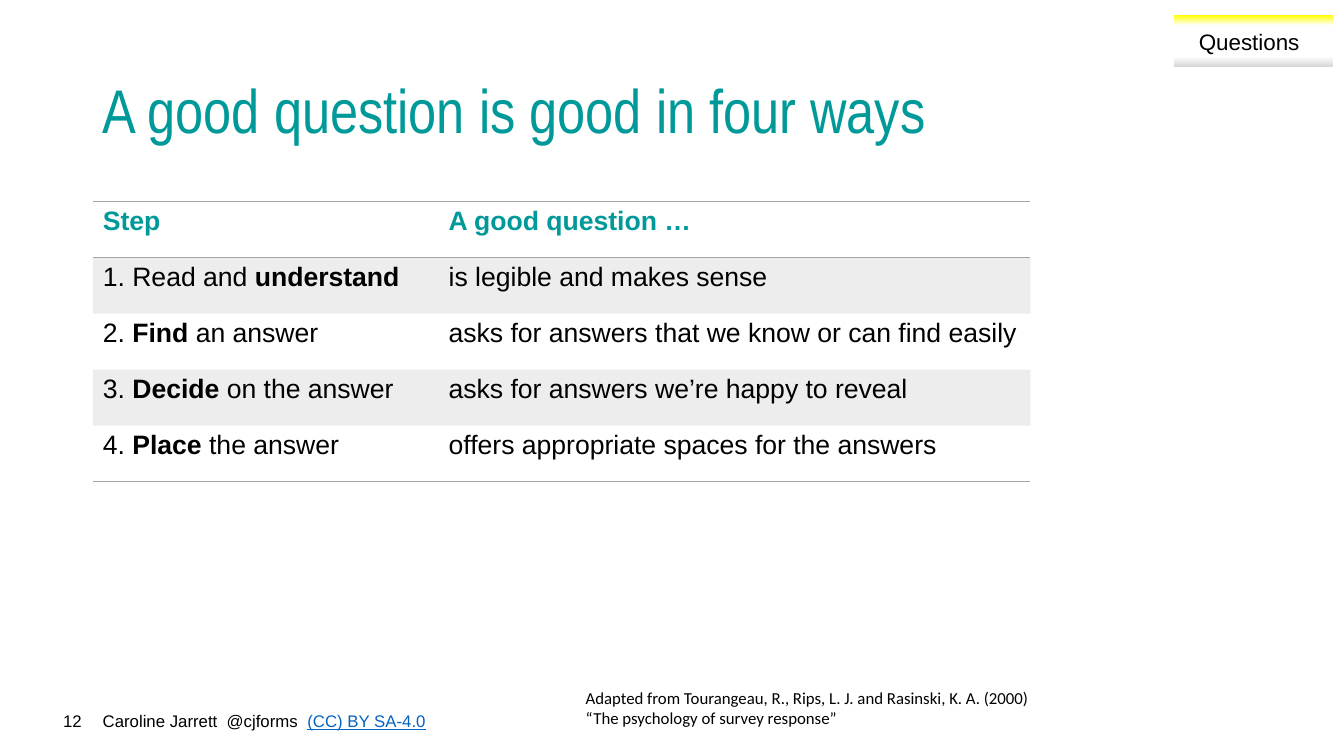
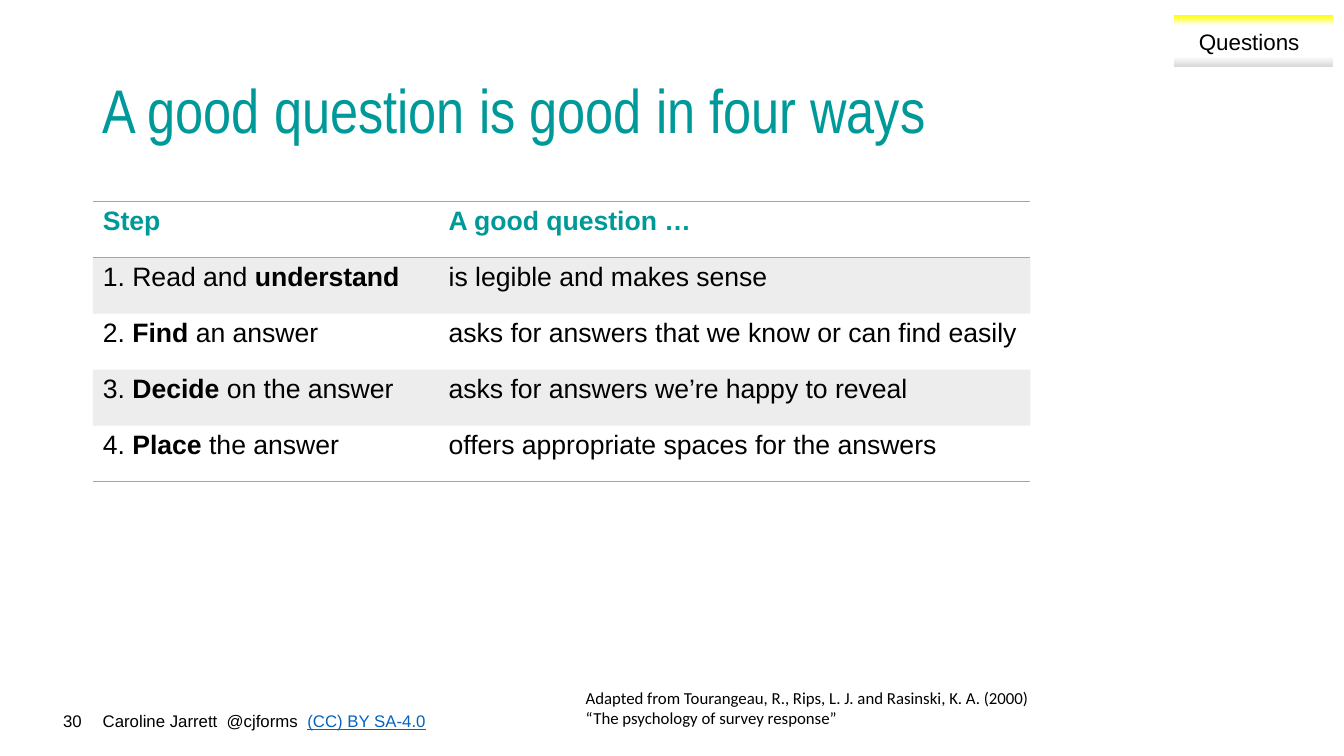
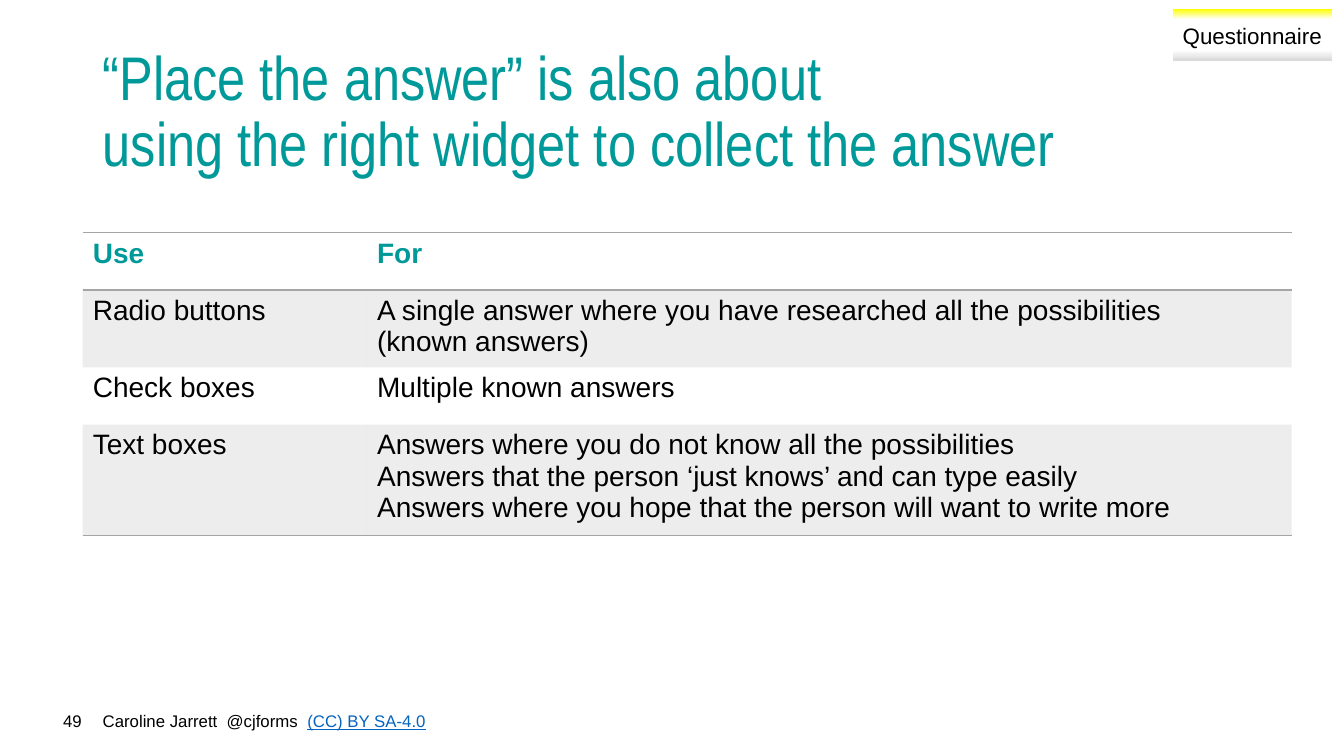
from lxml.etree import SubElement
from pptx import Presentation
from pptx.dml.color import RGBColor
from pptx.enum.shapes import MSO_SHAPE
from pptx.enum.text import MSO_ANCHOR, PP_ALIGN
from pptx.oxml.ns import qn
from pptx.util import Inches, Pt

COLORS = {
    "teal": "009999", "black": "000000", "gray": "A5A5A5", "link": "0563C1",
    "yellow": "FFFF00", "white": "FFFFFF", "silver": "D9D9D9",
}
TAG_STOPS = [(0, "yellow"), (20, "white"), (80, "white"), (100, "silver")]
NO_STYLE = "{2D5ABB26-0587-4C30-8999-92F81FD0307C}"

AUTHOR = "Caroline Jarrett  @cjforms  "
LICENCE = "(CC) BY SA-4.0"
CITATION = """Adapted from Tourangeau, R., Rips, L. J. and Rasinski, K. A. (2000)
“The psychology of survey response”"""

FOUR_WAYS = {
    "title": "A good question is good in four ways",
    "tag": ("Questions", 11.64, 0.15, 11.61, 1.56),
    "citation": CITATION,
    "table": {
        "at": (0.92, 2, 9.3, 2.78), "cols": (3.43, 5.87), "size": 19,
        "rows": [
            ("Step", "A good question …"),
            ("1. Read and **understand**", "is legible and makes sense"),
            ("2. **Find** an answer", "asks for answers that we know or can find easily"),
            ("3.** Decide **on the answer", "asks for answers we’re happy to reveal"),
            ("4.** Place **the answer", "offers appropriate spaces for the answers"),
        ],
    },
}
WIDGETS = {
    "title": """“Place the answer” is also about
using the right widget to collect the answer""",
    "tag": ("Questionnaire", 11.63, 0.09, 11.62, 1.6),
    "table": {
        "at": (0.82, 2.31, 11.99, 2.27), "cols": (2.82, 9.17), "size": 20,
        "rows": [
            ("Use", "For"),
            ("Radio buttons", """A single answer where you have researched all the possibilities
(known answers)"""),
            ("Check boxes", "Multiple known answers"),
            ("Text boxes", """Answers where you do not know all the possibilities
Answers that the person ‘just knows’ and can type easily
Answers where you hope that the person will want to write more"""),
        ],
    },
}
SLIDES = [(12, FOUR_WAYS), (30, FOUR_WAYS), (49, WIDGETS)]


def rgb(name):
    return RGBColor.from_string(COLORS[name])


def write(p, text, size, color="black", name="Arial", bold=False):
    font = p.font
    font.size, font.name, font.bold = Pt(size), name, bold
    font.color.rgb = rgb(color)
    for i, part in enumerate(text.split("**")):
        for j, line in enumerate(part.split("\n")):
            if j:
                p.add_line_break()
            if line:
                r = p.add_run()
                r.text = line
                if i % 2:
                    r.font.bold = True


def add_text(shapes, at, text, size, align=PP_ALIGN.LEFT, **style):
    tf = shapes.add_textbox(*map(Inches, at)).text_frame
    tf.word_wrap = True
    p = tf.paragraphs[0]
    p.alignment = align
    write(p, text, size, **style)
    return tf


def add_title(s, text):
    tf = add_text(s.shapes, (0.92, 0.4, 11.5, 1.45), text, 44, color="teal", name="Arial Narrow")
    tf.vertical_anchor = MSO_ANCHOR.MIDDLE
    tf.paragraphs[0].line_spacing = 0.9


def add_footer(s, number):
    tf = add_text(s.shapes, (0.92, 7, 5.71, 0.3), AUTHOR, 12)
    r = tf.paragraphs[0].add_run()
    r.text = LICENCE
    r.font.underline = True
    r.font.color.rgb = rgb("link")
    add_text(s.shapes, (0, 7, 0.91, 0.3), str(number), 12, PP_ALIGN.RIGHT)


def add_tag(s, text, left, top, text_left, text_width):
    group = s.shapes.add_group_shape().shapes
    sp = group.add_shape(MSO_SHAPE.RECTANGLE, *map(Inches, (left, top, 1.58, 0.51)))
    sp.shadow.inherit = False
    sp.line.fill.background()
    sp.fill.gradient()
    sp.fill.gradient_angle = 270
    stops = sp._element.spPr.find(".//" + qn("a:gsLst"))
    for stop in list(stops):
        stops.remove(stop)
    for pos, color in TAG_STOPS:
        stop = SubElement(stops, qn("a:gs"), pos=str(pos * 1000))
        SubElement(stop, qn("a:srgbClr"), val=COLORS[color])
    add_text(group, (text_left, top + 0.08, text_width, 0.37), text, 16, PP_ALIGN.CENTER)


def add_border(cell, side):
    tc_pr = cell._tc.get_or_add_tcPr()
    ln = SubElement(tc_pr, qn("a:ln" + side), w=str(Pt(1)))
    SubElement(SubElement(ln, qn("a:solidFill")), qn("a:srgbClr"), val=COLORS["gray"])


def fill_cell(cell, shaded):
    if shaded:
        cell.fill.solid()
        cell.fill.fore_color.rgb = rgb("gray")
        color = cell._tc.tcPr.find(qn("a:solidFill")).find(qn("a:srgbClr"))
        SubElement(color, qn("a:alpha"), val="20000")
    else:
        cell.fill.background()


def add_grid(s, at, cols, size, rows):
    frame = s.shapes.add_table(len(rows), len(cols), *map(Inches, at))
    table = frame.table
    table._tbl.tblPr.find(qn("a:tableStyleId")).text = NO_STYLE
    table.horz_banding = False
    for column, width in zip(table.columns, cols):
        column.width = Inches(width)
    for i, row in enumerate(rows):
        header = i == 0
        for j, text in enumerate(row):
            cell = table.cell(i, j)
            if header:
                add_border(cell, "T")
            if header or i == len(rows) - 1:
                add_border(cell, "B")
            fill_cell(cell, i % 2 == 1)
            write(cell.text_frame.paragraphs[0], text, size, "teal" if header else "black", bold=header)


def main():
    prs = Presentation()
    prs.slide_width, prs.slide_height = Inches(13.33), Inches(7.5)
    for number, content in SLIDES:
        s = prs.slides.add_slide(prs.slide_layouts[6])
        add_footer(s, number)
        add_title(s, content["title"])
        add_grid(s, **content["table"])
        if "citation" in content:
            add_text(s.shapes, (5.71, 6.77, 6.24, 0.5), content["citation"], 12, name="Calibri")
        add_tag(s, *content["tag"])
    prs.save("out.pptx")


if __name__ == "__main__":
    main()
